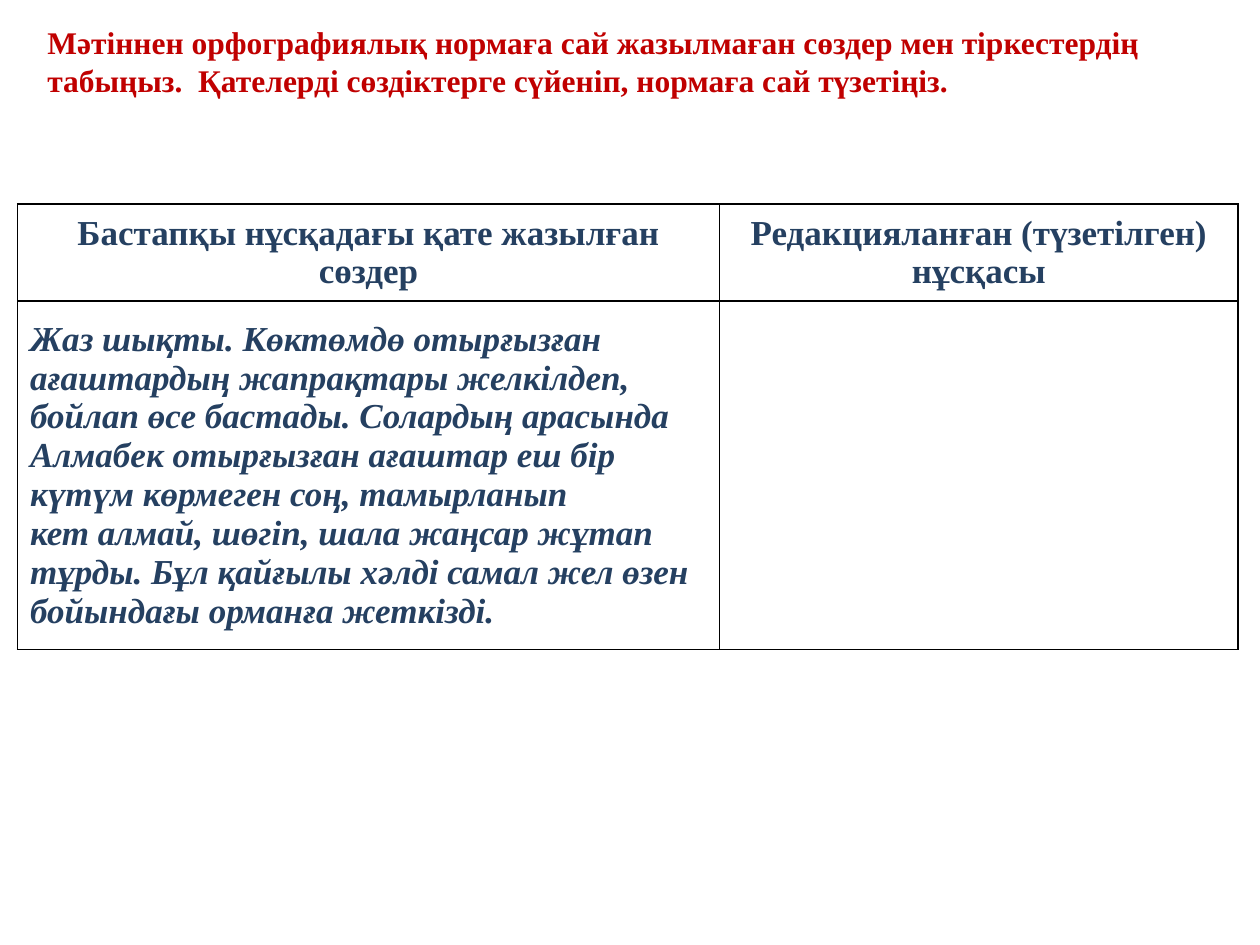
"""Build the spelling exercise slide: a heading over a two-column table."""
from pptx import Presentation
from pptx.dml.color import RGBColor as Rgb
from pptx.enum.text import MSO_ANCHOR as Anchor, PP_ALIGN as Align
from pptx.oxml import parse_xml
from pptx.oxml.ns import nsdecls
from pptx.util import Pt

HUES = {"title": "C00000", "text": "254061", "line": "000000"}
HEADS = [
    "Бастапқы нұсқадағы қате жазылған сөздер",
    "Редакцияланған (түзетілген) нұсқасы",
]
STORY = [
    "Жаз шықты. Көктөмдө отырғызған ағаштардың жапрақтары желкілдеп, "
    "бойлап өсе бастады. Солардың арасында Алмабек отырғызған ағаштар еш бір "
    "күтүм көрмеген соң, тамырланып",
    "кет алмай, шөгіп, шала жаңсар жұтап тұрды. Бұл қайғылы хәлді самал "
    "жел өзен бойындағы орманға жеткізді.",
]


def write(par, text, size, hue, slant=False):
    run = par.add_run()
    run.text = text
    font = run.font
    font.name = "Times New Roman"
    font.size = Pt(size)
    font.bold = True
    font.italic = slant
    font.color.rgb = Rgb.from_string(HUES[hue])


def border(cell):
    props = cell._tc.get_or_add_tcPr()
    for i, side in enumerate(("lnL", "lnR", "lnT", "lnB")):
        props.insert(i, parse_xml(
            f'<a:{side} {nsdecls("a")} w="{Pt(1)}"><a:solidFill>'
            f'<a:srgbClr val="{HUES["line"]}"/></a:solidFill></a:{side}>'))


deck = Presentation()
deck.slide_width, deck.slide_height = Pt(720), Pt(540)
slide = deck.slides.add_slide(deck.slide_layouts[6])

box = slide.shapes.add_textbox(Pt(20), Pt(9.5), Pt(677.5), Pt(51))
box.text_frame.word_wrap = True
write(
    box.text_frame.paragraphs[0],
    "Мәтіннен орфографиялық нормаға сай жазылмаған сөздер мен тіркестердің "
    "табыңыз.  Қателерді сөздіктерге сүйеніп, нормаға сай түзетіңіз.",
    18, "title")

frame = slide.shapes.add_table(2, 2, Pt(10), Pt(116.7), Pt(697.5), Pt(254.5))
table = frame.table
table.first_row = table.horz_banding = False
for col, width in zip(table.columns, (401.2, 296.3)):
    col.width = Pt(width)
for row, height in zip(table.rows, (55.3, 199.2)):
    row.height = Pt(height)
for cell in table.iter_cells():
    cell.fill.background()
    cell.vertical_anchor = Anchor.MIDDLE
    border(cell)

for i, head in enumerate(HEADS):
    par = table.cell(0, i).text_frame.paragraphs[0]
    par.alignment = Align.CENTER
    write(par, head, 20, "text")

body = table.cell(1, 0).text_frame
for i, text in enumerate(STORY):
    par = body.add_paragraph() if i else body.paragraphs[0]
    write(par, text, 20, "text", slant=True)

deck.save("out.pptx")
